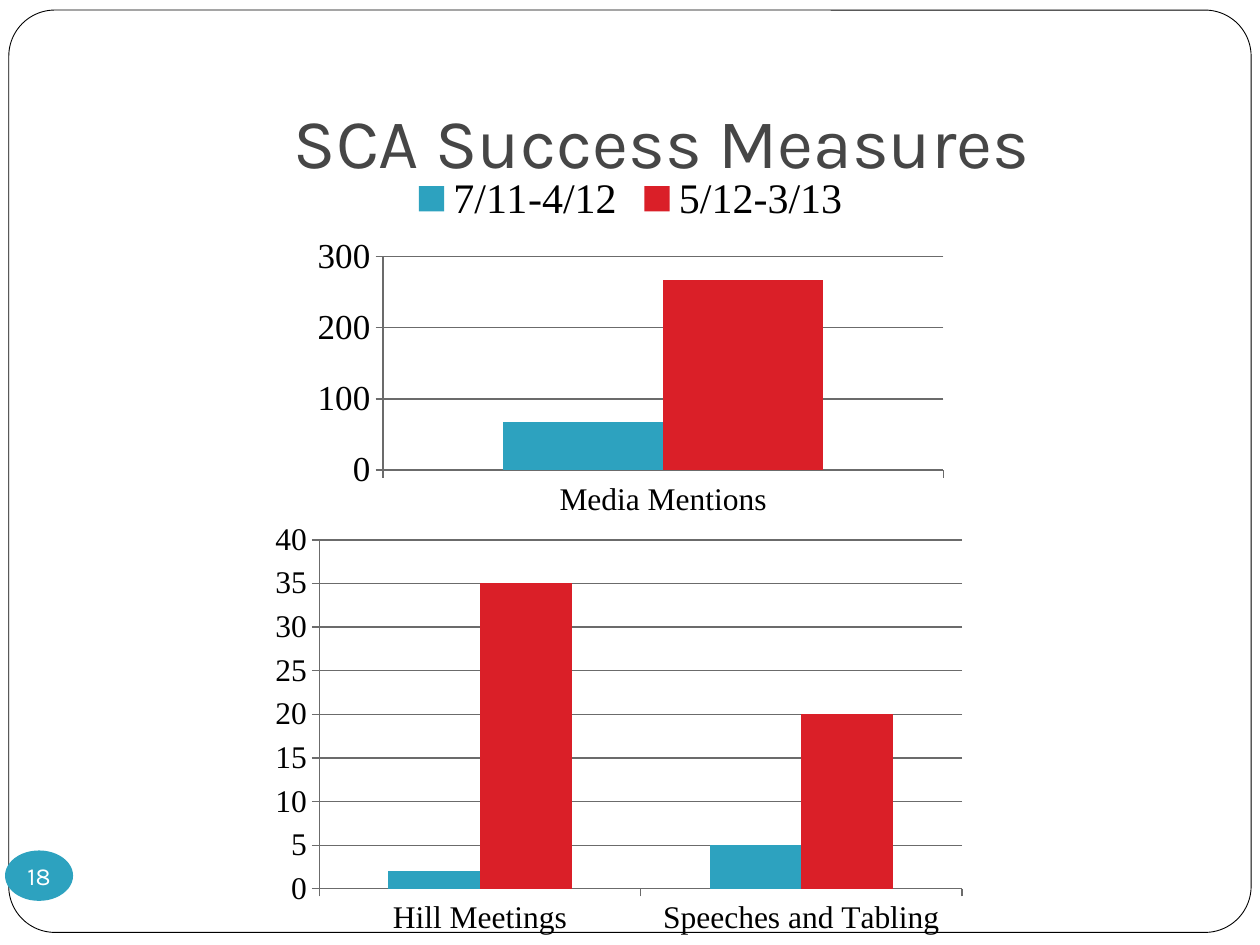
from dataclasses import dataclass

from lxml.etree import SubElement
from pptx import Presentation
from pptx.chart.data import CategoryChartData
from pptx.dml.color import RGBColor
from pptx.enum.chart import XL_CHART_TYPE, XL_LEGEND_POSITION, XL_TICK_MARK
from pptx.enum.shapes import MSO_SHAPE
from pptx.enum.text import MSO_ANCHOR, MSO_AUTO_SIZE, PP_ALIGN
from pptx.oxml.ns import qn
from pptx.util import Inches, Pt


@dataclass(frozen=True)
class Theme:
    heading_font: str = "Karla"
    chart_font: str = "Times New Roman"
    white: RGBColor = RGBColor(0xFF, 0xFF, 0xFF)
    black: RGBColor = RGBColor(0, 0, 0)
    title_gray: RGBColor = RGBColor(0x46, 0x46, 0x46)
    axis_gray: RGBColor = RGBColor(0x6B, 0x6B, 0x6B)
    teal: RGBColor = RGBColor(0x2D, 0xA2, 0xBF)
    red: RGBColor = RGBColor(0xDA, 0x1F, 0x28)
    title_size: int = 40
    legend_size: int = 24
    large_label_size: int = 20
    label_size: int = 18
    number_size: int = 14


def write_text(text_frame, text, *, font, size, color, anchor,
               margins=(0, 0, 0, 0), wrap=True):
    text_frame.text = text
    text_frame.word_wrap = wrap
    text_frame.auto_size = MSO_AUTO_SIZE.NONE
    text_frame.vertical_anchor = anchor
    (text_frame.margin_left, text_frame.margin_top,
     text_frame.margin_right, text_frame.margin_bottom) = map(Inches, margins)
    paragraph = text_frame.paragraphs[0]
    paragraph.alignment = PP_ALIGN.CENTER
    paragraph.font.name = font
    paragraph.font.size = Pt(size)
    paragraph.font.color.rgb = color


class SlideBuilder:
    def __init__(self, slide, theme):
        self.slide = slide
        self.theme = theme

    def title(self, text, left, top, width, height):
        title = self.slide.shapes.title
        title.left, title.top = Inches(left), Inches(top)
        title.width, title.height = Inches(width), Inches(height)
        write_text(title.text_frame, text, font=self.theme.heading_font,
                   size=self.theme.title_size, color=self.theme.title_gray,
                   anchor=MSO_ANCHOR.BOTTOM, margins=(0.1, 0.05, 0.1, 0.1))

    def shape(self, kind, left, top, width, height, fill):
        shape = self.slide.shapes.add_shape(
            kind, Inches(left), Inches(top), Inches(width), Inches(height))
        shape.shadow.inherit = False
        shape.fill.solid()
        shape.fill.fore_color.rgb = fill
        shape.line.fill.background()
        return shape

    def frame(self, left, top, width, height):
        frame = self.shape(MSO_SHAPE.ROUNDED_RECTANGLE,
                           left, top, width, height, self.theme.white)
        frame.adjustments[0] = 0.05
        frame.line.color.rgb = self.theme.black
        frame.line.width = Pt(0.5)
        self.slide.shapes.title.element.addprevious(frame.element)

    def page_number(self, number, left, top, width, height):
        badge = self.shape(MSO_SHAPE.OVAL, left, top, width, height, self.theme.teal)
        write_text(badge.text_frame, str(number), font=self.theme.heading_font,
                   size=self.theme.number_size, color=self.theme.white,
                   anchor=MSO_ANCHOR.MIDDLE, wrap=False)

    def column_chart(self, left, top, width, height, *, categories, series,
                     maximum, step, value_size, plot, legend=False):
        data = CategoryChartData()
        data.categories = categories
        for name, values in series.items():
            data.add_series(name, values)
        chart = self.slide.shapes.add_chart(
            XL_CHART_TYPE.COLUMN_CLUSTERED, Inches(left), Inches(top),
            Inches(width), Inches(height), data).chart
        chart.has_title = False
        chart.font.name = self.theme.chart_font
        chart.font.size = Pt(self.theme.label_size)
        chart.font.color.rgb = self.theme.black

        columns = chart.plots[0]
        columns.gap_width = 150
        columns.overlap = 0
        columns.vary_by_categories = False
        for column, color in zip(columns.series, (self.theme.teal, self.theme.red)):
            column.format.fill.solid()
            column.format.fill.fore_color.rgb = color

        value_axis = chart.value_axis
        value_axis.minimum_scale = 0
        value_axis.maximum_scale = maximum
        value_axis.major_unit = step
        value_axis.has_major_gridlines = True
        self.axis(chart.category_axis, self.theme.label_size)
        self.axis(value_axis, value_size)
        self.line(value_axis.major_gridlines.format.line)

        chart.has_legend = legend
        if legend:
            chart.legend.position = XL_LEGEND_POSITION.TOP
            chart.legend.include_in_layout = False
            chart.legend.font.size = Pt(self.theme.legend_size)
            chart.legend.font.name = self.theme.chart_font
        self.plot_layout(chart, plot)

    def axis(self, axis, size):
        axis.major_tick_mark = XL_TICK_MARK.OUTSIDE
        axis.minor_tick_mark = XL_TICK_MARK.NONE
        axis.tick_labels.font.size = Pt(size)
        axis.tick_labels.font.name = self.theme.chart_font
        self.line(axis.format.line)

    def line(self, line):
        line.color.rgb = self.theme.axis_gray
        line.width = Pt(0.75)

    def plot_layout(self, chart, plot):
        area = chart.element.find(".//" + qn("c:plotArea"))
        for layout in area.findall(qn("c:layout")):
            area.remove(layout)
        layout = SubElement(area, qn("c:layout"))
        area.insert(0, layout)
        manual = SubElement(layout, qn("c:manualLayout"))
        settings = [("layoutTarget", "inner"), ("xMode", "edge"), ("yMode", "edge")]
        for tag, value in settings + list(zip("xywh", plot)):
            SubElement(manual, qn(f"c:{tag}")).set("val", str(value))


def main():
    theme = Theme()
    presentation = Presentation()
    presentation.slide_width = Inches(10)
    presentation.slide_height = Inches(7.5)
    slide = presentation.slides.add_slide(presentation.slide_layouts[5])
    builder = SlideBuilder(slide, theme)

    builder.title("SCA Success Measures", 1, 0.3, 8.5, 1.25)
    builder.frame(0.07, 0.08, 9.86, 7.32)
    builder.column_chart(
        2.42, 1.25, 5.17, 2.92,
        categories=["Media Mentions"],
        series={"7/11-4/12": [67], "5/12-3/13": [267]},
        maximum=300, step=100, value_size=theme.large_label_size,
        plot=(0.12, 0.27, 0.86, 0.58), legend=True)
    builder.page_number(18, 0.04, 6.75, 0.54, 0.4)
    builder.column_chart(
        2.08, 4.08, 5.67, 3.42,
        categories=["Hill Meetings", "Speeches and Tabling"],
        series={"Series 1": [2, 5], "Series 2": [35, 20]},
        maximum=40, step=5, value_size=theme.label_size,
        plot=(0.08, 0.06, 0.9, 0.81))
    presentation.save("out.pptx")


if __name__ == "__main__":
    main()
